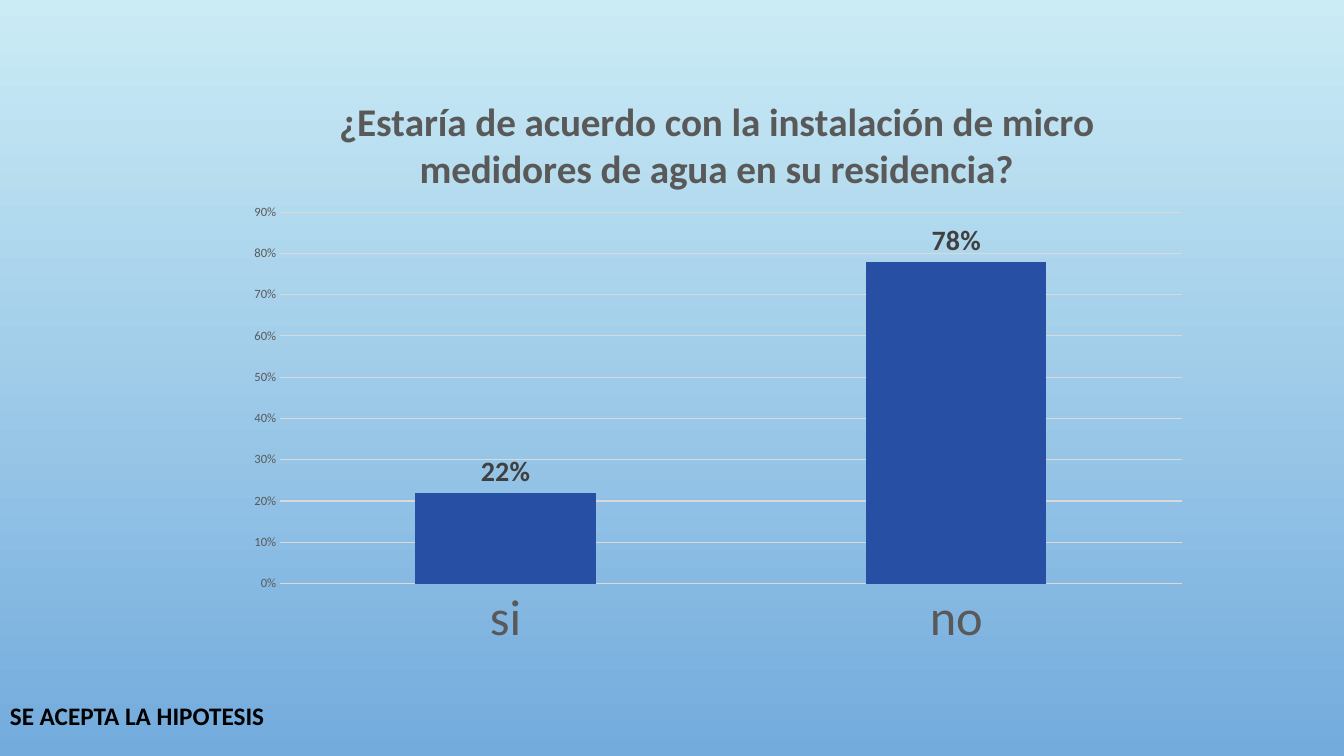
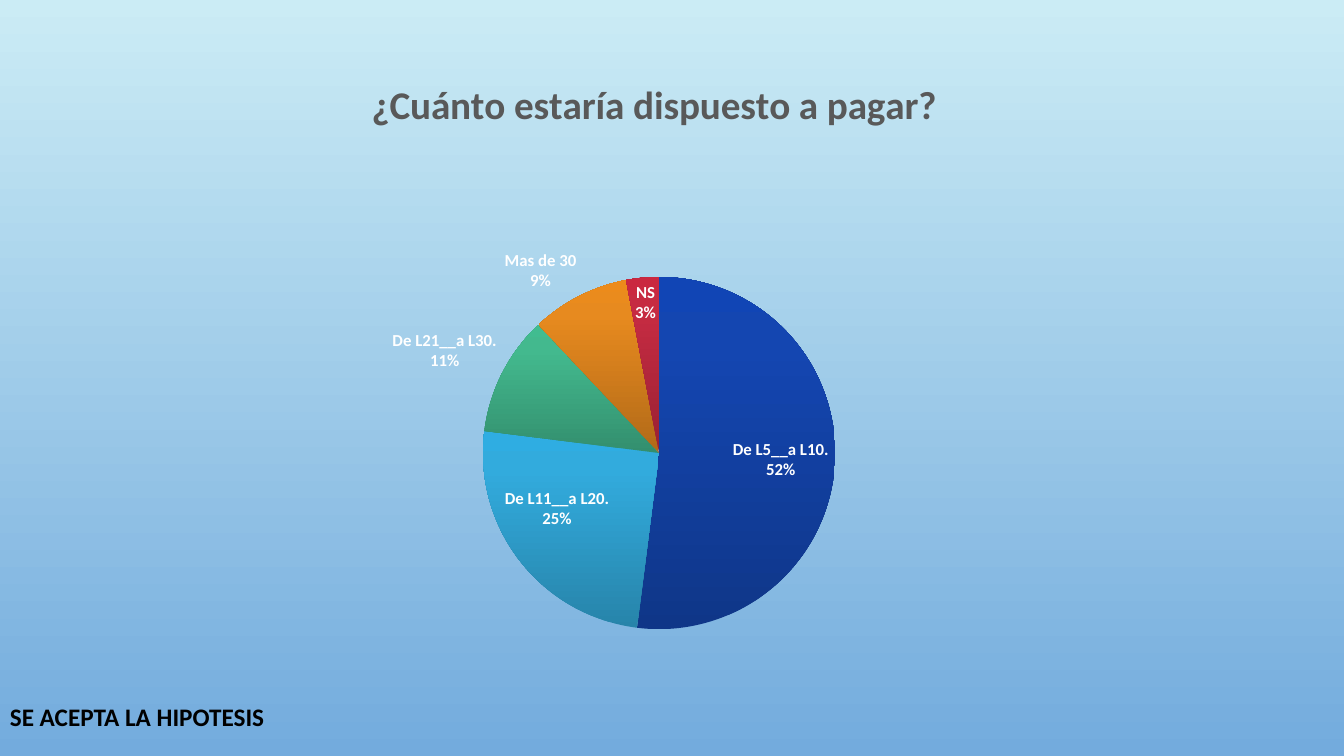
from lxml import etree
from pptx import Presentation
from pptx import util as u
from pptx.chart import data as chart_data
from pptx.dml import color
from pptx.enum import chart as ch
from pptx.enum import text as txt
from pptx.oxml import parse_xml
from pptx.oxml.ns import nsdecls, qn

FONT = "Calibri"
COLORS = {
    "text": "000000",
    "muted": "595959",
    "value": "404040",
    "grid": "D9D9D9",
    "bar": "274FA4",
    "label": "FFFFFF",
}
BACKGROUND = [(0, "CBECF5"), (100, "73ABDD")]
SLICES = [
    ("0F3688", "1446B1", "1145B5"),
    ("2784AA", "32ABDD", "2FADE2"),
    ("338F6E", "43B98E", "41BC90"),
    ("B26A18", "E78A1F", "EC8B1B"),
    ("992133", "C62B42", "CA2840"),
]
SLICE_STOPS = (0, 80, 100)
CAPTION = "SE ACEPTA LA HIPOTESIS"

ACCEPTANCE = {
    "title": "¿Estaría de acuerdo con la instalación de micro medidores de agua en su residencia?",
    "type": ch.XL_CHART_TYPE.COLUMN_CLUSTERED,
    "values": {"si": 0.22, "no": 0.78},
    "at": (5.84, 1.78, 24.43, 14.86),
    "plot": (0.05, 0.24, 0.93, 0.63),
    "caption_top": 17.53,
}
PAYMENT = {
    "title": "¿Cuánto estaría dispuesto a pagar?",
    "type": ch.XL_CHART_TYPE.PIE,
    "values": {
        "De L5__a L10.": 52,
        "De L11__a L20.": 25,
        "De L21__a L30.": 11,
        "Mas de 30": 9,
        "NS": 3,
    },
    "at": (3.4, 1.3, 26.16, 17.75),
    "plot": (0.1, 0.32, 0.81, 0.5),
    "caption_top": 17.55,
}


def rgb(name):
    return color.RGBColor.from_string(COLORS[name])


def style(font, size, shade="text", bold=False):
    font.name = FONT
    font.size = u.Pt(size)
    font.bold = bold
    font.color.rgb = rgb(shade)


def write(frame, text, **look):
    para = frame.paragraphs[0]
    span = para.add_run()
    span.text = text
    style(span.font, **look)


def set_stops(gradient, stops):
    stop_list = gradient.find(qn("a:gsLst"))
    for old in list(stop_list):
        stop_list.remove(old)
    for position, shade in stops:
        stop = etree.SubElement(stop_list, qn("a:gs"), pos=str(position * 1000))
        etree.SubElement(stop, qn("a:srgbClr"), val=shade)


def set_background(master):
    fill = master.background.fill
    fill.gradient()
    fill.gradient_angle = 270
    set_stops(next(master.element.iter(qn("a:gradFill"))), BACKGROUND)


def place_plot(chart, fractions):
    """Fix the inner plot area, given as fractions of the chart."""
    area = next(chart.element.iter(qn("c:plotArea")))
    for old in area.findall(qn("c:layout")):
        area.remove(old)
    layout = etree.Element(qn("c:layout"))
    manual = etree.SubElement(layout, qn("c:manualLayout"))
    settings = [("layoutTarget", "inner"), ("xMode", "edge"), ("yMode", "edge")]
    settings += zip("xywh", fractions)
    for tag, value in settings:
        etree.SubElement(manual, qn("c:" + tag), val=str(value))
    area.insert(0, layout)


def add_chart(slide, content):
    source = chart_data.CategoryChartData()
    source.categories = list(content["values"])
    source.add_series("Series 1", list(content["values"].values()))
    place = [u.Cm(length) for length in content["at"]]
    chart = slide.shapes.add_chart(content["type"], *place, source).chart
    style(chart.font, 10)
    chart.has_legend = False
    chart.has_title = True
    write(chart.chart_title.text_frame, content["title"],
          size=28, shade="muted", bold=True)
    place_plot(chart, content["plot"])
    clear = parse_xml(
        f'<c:spPr {nsdecls("c", "a")}><a:noFill/><a:ln><a:noFill/></a:ln></c:spPr>')
    chart.element.find(qn("c:chart")).addnext(clear)
    return chart


def add_labels(series, size, shade, position):
    labels = series.data_labels
    style(labels.font, size, shade, bold=True)
    labels.number_format = "0%"
    labels.number_format_is_linked = False
    labels.position = position
    return labels


def set_line(line, shade):
    line.color.rgb = rgb(shade)
    line.width = u.Pt(0.75)


def format_columns(chart):
    plot = chart.plots[0]
    plot.gap_width = 150
    plot.vary_by_categories = False
    series = plot.series[0]
    series.format.fill.solid()
    series.format.fill.fore_color.rgb = rgb("bar")
    labels = add_labels(series, 20, "value", ch.XL_LABEL_POSITION.OUTSIDE_END)
    labels.show_value = True

    for axis, size in ((chart.category_axis, 36), (chart.value_axis, 9)):
        style(axis.tick_labels.font, size, "muted")
        axis.major_tick_mark = axis.minor_tick_mark = ch.XL_TICK_MARK.NONE
    set_line(chart.category_axis.format.line, "grid")
    scale = chart.value_axis
    scale.minimum_scale, scale.maximum_scale, scale.major_unit = 0, 0.9, 0.1
    scale.tick_labels.number_format = "0%"
    scale.tick_labels.number_format_is_linked = False
    scale.format.line.fill.background()
    scale.has_major_gridlines = True
    set_line(scale.major_gridlines.format.line, "grid")


def format_pie(chart):
    plot = chart.plots[0]
    plot.vary_by_categories = True
    series = plot.series[0]
    for index in range(len(SLICES)):
        look = series.points[index].format
        look.fill.gradient()
        look.fill.gradient_angle = 90
        look.line.fill.background()
    for gradient, shades in zip(chart.element.iter(qn("a:gradFill")), SLICES):
        set_stops(gradient, zip(SLICE_STOPS, shades))

    labels = add_labels(series, 12, "label", ch.XL_LABEL_POSITION.BEST_FIT)
    labels.show_value = False
    labels.show_category_name = True
    labels.show_percentage = True
    block = next(chart.element.iter(qn("c:dLbls")))
    separator = etree.Element(qn("c:separator"))
    separator.text = "\n"
    block.find(qn("c:showPercent")).getnext().addnext(separator)


def add_caption(slide, top):
    box = slide.shapes.add_textbox(u.Cm(0), u.Cm(top), u.Cm(7.26), u.Cm(1.02))
    frame = box.text_frame
    frame.word_wrap = False
    frame.auto_size = txt.MSO_AUTO_SIZE.SHAPE_TO_FIT_TEXT
    write(frame, CAPTION, size=18, bold=True)


def main():
    deck = Presentation()
    deck.slide_width, deck.slide_height = u.Cm(33.87), u.Cm(19.05)
    set_background(deck.slide_master)
    for content, finish in ((ACCEPTANCE, format_columns), (PAYMENT, format_pie)):
        slide = deck.slides.add_slide(deck.slide_layouts[6])
        finish(add_chart(slide, content))
        add_caption(slide, content["caption_top"])
    deck.save("out.pptx")


if __name__ == "__main__":
    main()
